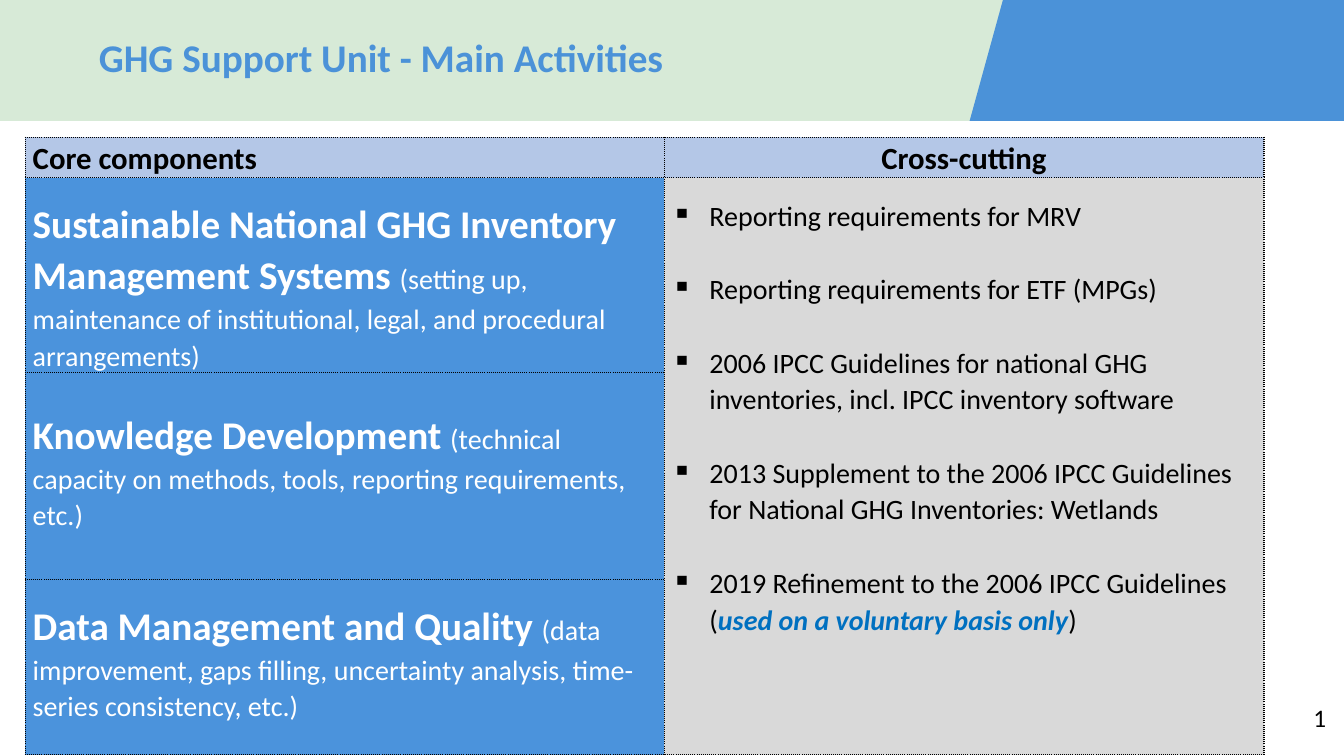
"""Build the slide on the main activities of the GHG Support Unit."""
import pptx
import pptx.dml.color
import pptx.enum.text
import pptx.oxml
import pptx.oxml.ns
import pptx.util
from pptx.enum.shapes import MSO_SHAPE

Pt = pptx.util.Pt
PP_ALIGN = pptx.enum.text.PP_ALIGN
MSO_ANCHOR = pptx.enum.text.MSO_ANCHOR
THEME = {
    "font": "Calibri",
    "title": 28, "heading": 22, "body": 20, "number": 18,
    "mint": "D7EAD7", "blue": "4B92D8", "core": "4B93DC", "header": "B4C7E7",
    "grey": "D9D9D9", "black": "000000", "white": "FFFFFF", "accent": "0070C0",
}


def write(paragraph, *runs, **layout):
    """Add (text, size, colour, styles) runs and apply paragraph settings."""
    for name, value in layout.items():
        setattr(paragraph, name, value)
    for text, size, colour, styles in runs:
        run = paragraph.add_run()
        run.text = text
        look = {"name": THEME["font"], "size": Pt(THEME[size]), "bold": "b" in styles, "italic": "i" in styles}
        for name, value in look.items():
            setattr(run.font, name, value)
        run.font.color.rgb = pptx.dml.color.RGBColor.from_string(THEME[colour])


def paint(part, colour):
    """Give a shape or cell a solid fill."""
    part.fill.solid()
    part.fill.fore_color.rgb = pptx.dml.color.RGBColor.from_string(THEME[colour])


deck = pptx.Presentation()
deck.slide_width, deck.slide_height = Pt(960), Pt(540)
slide = deck.slides.add_slide(deck.slide_layouts[6])

banner = slide.shapes.add_shape(MSO_SHAPE.RECTANGLE, 0, 0, Pt(960), Pt(86.4))
outline = slide.shapes.build_freeform(Pt(716.4), 0)
outline.add_line_segments([(Pt(960), 0), (Pt(960), Pt(86.4)), (Pt(692.6), Pt(86.4))], close=True)
corner = outline.convert_to_shape()
for part, colour in ((banner, "mint"), (corner, "blue")):
    paint(part, colour)
    part.line.fill.background()
    part.shadow.inherit = False

title = slide.shapes.add_textbox(Pt(70.6), Pt(21), Pt(565), Pt(44)).text_frame
title_format = {
    "word_wrap": True, "vertical_anchor": MSO_ANCHOR.MIDDLE,
    "margin_left": 0, "margin_right": 0, "margin_top": 0, "margin_bottom": 0,
}
for name, value in title_format.items():
    setattr(title, name, value)
write(title.paragraphs[0], ("GHG Support Unit - Main Activities", "title", "blue", "b"), line_spacing=0.9)

column_widths = (456.4, 428.5)
row_heights = (29, 139, 148, 125)
activities = slide.shapes.add_table(
    4, 2, Pt(18), Pt(98), Pt(sum(column_widths)), Pt(sum(row_heights))).table
activities.first_row = activities.horz_banding = False
for column, width in zip(activities.columns, column_widths):
    column.width = Pt(width)
for row, height in zip(activities.rows, row_heights):
    row.height = Pt(height)

fills = (("header", "header"),) + (("core", "grey"),) * 3
top_margins = ((0, 0), (14.4, 13.7), (26.1, 0), (14.4, 0))
namespace = pptx.oxml.ns.nsdecls("a")
for r, row in enumerate(activities.rows):
    for c, cell in enumerate(row.cells):
        cell_format = {
            "margin_left": Pt(5.4), "margin_right": Pt(5.4),
            "margin_top": Pt(top_margins[r][c]), "margin_bottom": 0, "vertical_anchor": MSO_ANCHOR.TOP,
        }
        for name, value in cell_format.items():
            setattr(cell, name, value)
        for side in ("lnL", "lnR", "lnT", "lnB"):
            cell._tc.get_or_add_tcPr().append(pptx.oxml.parse_xml(
                f'<a:{side} {namespace} w="12700"><a:solidFill><a:srgbClr val="{THEME["black"]}"/>'
                f'</a:solidFill><a:prstDash val="sysDot"/></a:{side}>'))
        paint(cell, fills[r][c])
activities.cell(1, 1).merge(activities.cell(3, 1))

headings = (("Core components", PP_ALIGN.LEFT), ("Cross-cutting", PP_ALIGN.CENTER))
for c, (heading, alignment) in enumerate(headings):
    write(activities.cell(0, c).text_frame.paragraphs[0],
          (heading, "heading", "black", "b"), alignment=alignment, line_spacing=1.07)

core_components = (
    ("Sustainable National GHG Inventory Management Systems ",
     "(setting up, maintenance of institutional, legal, and procedural arrangements)"),
    ("Knowledge Development ",
     "(technical capacity on methods, tools, reporting requirements, etc.)"),
    ("Data Management and Quality ",
     "(data improvement, gaps filling, uncertainty analysis, time-series consistency, etc.)"),
)
for r, (component, details) in enumerate(core_components, start=1):
    write(activities.cell(r, 0).text_frame.paragraphs[0],
          (component, "title", "white", "b"), (details, "body", "white", ""), line_spacing=1.07)

cross_cutting = (
    (("Reporting requirements for MRV", "body", "black", ""),),
    (("Reporting requirements for ETF (MPGs)", "body", "black", ""),),
    (("2006 IPCC Guidelines for national GHG inventories, incl. IPCC inventory software", "body", "black", ""),),
    (("2013 Supplement to the 2006 IPCC Guidelines for National GHG Inventories: Wetlands",
      "body", "black", ""),),
    (("2019 Refinement to the 2006 IPCC Guidelines (", "body", "black", ""),
     ("used on a voluntary basis only", "body", "accent", "bi"),
     (")", "body", "black", "")),
)
topics = activities.cell(1, 1).text_frame
for i, runs in enumerate(cross_cutting):
    topic = topics.add_paragraph() if i else topics.paragraphs[0]
    properties = topic._p.get_or_add_pPr()
    properties.set("marL", str(Pt(27)))
    properties.set("indent", str(-Pt(27)))
    properties.append(pptx.oxml.parse_xml(f'<a:buChar {namespace} char="▪"/>'))
    write(topic, *runs, line_spacing=1.07, space_before=Pt(26.3 if i else 0))

page_number = slide.shapes.add_textbox(Pt(931), Pt(498.2), Pt(29), Pt(29)).text_frame
page_number.word_wrap = False
write(page_number.paragraphs[0], ("1", "number", "black", ""))

deck.save("out.pptx")
